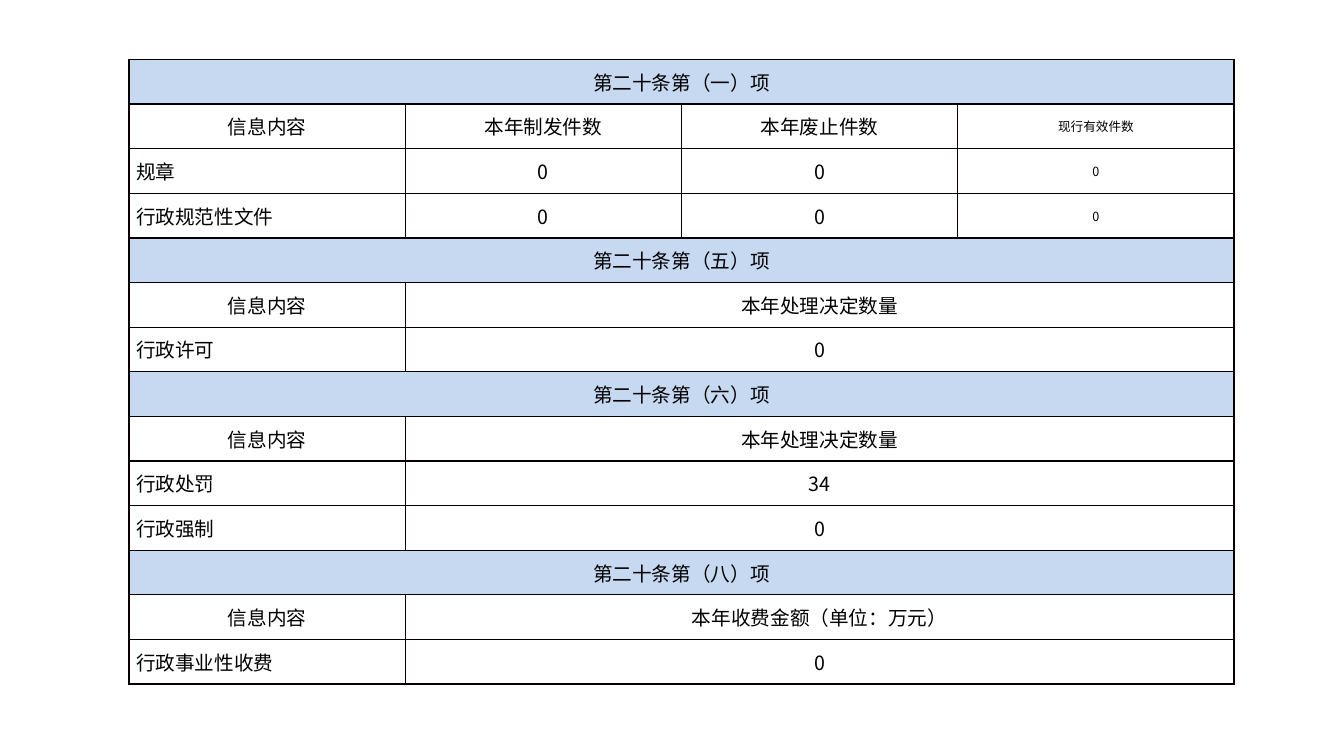
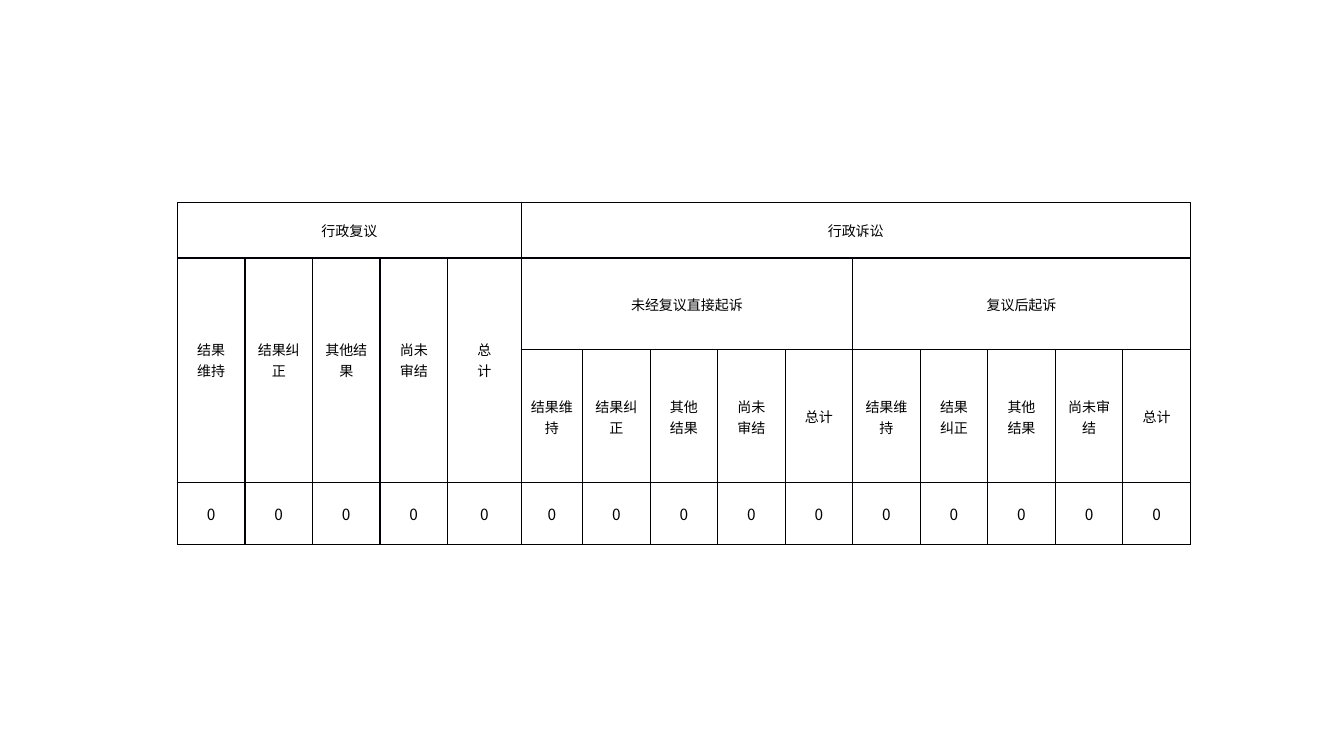
from dataclasses import dataclass
from typing import Optional

from lxml.etree import SubElement
from pptx import Presentation
from pptx.dml.color import RGBColor
from pptx.enum.text import MSO_ANCHOR, PP_ALIGN
from pptx.oxml.ns import qn
from pptx.util import Inches, Pt

FONT = "Noto Sans CJK SC"
INK = "000000"
BAND = "C6D9F1"
SIDE_INSET = 0.07


@dataclass
class Entry:
    """A text in a table, with its place and span in rows and columns."""
    text: str
    row: int
    col: int
    rows: int = 1
    cols: int = 1
    size: float = 14
    align: PP_ALIGN = PP_ALIGN.CENTER
    leading: Optional[float] = None
    fill: Optional[str] = None
    bottom: float = 0


@dataclass
class Section:
    """A banded heading, its column heads and its records."""
    title: str
    heads: list[str]
    records: list[list[str]]


def rgb(code: str) -> RGBColor:
    return RGBColor.from_string(code)


def put_text(tf, text: str, *, size: float, align: PP_ALIGN,
             leading: Optional[float] = None, color: str = INK) -> None:
    for i, line in enumerate(text.split("\n")):
        p = tf.add_paragraph() if i else tf.paragraphs[0]
        p.alignment = align
        if leading:
            p.line_spacing = Pt(leading)
        r = p.add_run()
        r.text = line
        r.font.size = Pt(size)
        r.font.name = FONT
        r.font.color.rgb = rgb(color)
        SubElement(r.font._element, qn("a:ea"), typeface=FONT)


def style_cell(cell, border: str) -> None:
    cell.margin_left = cell.margin_right = Inches(SIDE_INSET)
    cell.margin_top = cell.margin_bottom = 0
    cell.vertical_anchor = MSO_ANCHOR.MIDDLE
    tc_pr = cell._tc.get_or_add_tcPr()
    for side in ("lnL", "lnR", "lnT", "lnB"):
        ln = SubElement(tc_pr, qn(f"a:{side}"), w=str(Pt(1)))
        SubElement(SubElement(ln, qn("a:solidFill")), qn("a:srgbClr"), val=border)
    cell.fill.background()


def draw_table(slide, left: float, top: float, widths: list[float],
               heights: list[float], entries: list[Entry], border: str) -> None:
    sp = slide.shapes.add_table(len(heights), len(widths), Inches(left), Inches(top),
                                Inches(sum(widths)), Inches(sum(heights)))
    table = sp.table
    table.first_row = table.horz_banding = False
    for column, width in zip(table.columns, widths):
        column.width = Inches(width)
    for row, height in zip(table.rows, heights):
        row.height = Inches(height)
    for cell in table.iter_cells():
        style_cell(cell, border)
    for e in entries:
        cell = table.cell(e.row, e.col)
        if e.rows * e.cols > 1:
            cell.merge(table.cell(e.row + e.rows - 1, e.col + e.cols - 1))
        if e.fill:
            cell.fill.solid()
            cell.fill.fore_color.rgb = rgb(e.fill)
        cell.margin_bottom = Inches(e.bottom)
        put_text(cell.text_frame, e.text, size=e.size, align=e.align, leading=e.leading)


# Disclosure table: sections stacked on four equal columns
DECISIONS = ["信息内容", "本年处理决定数量"]
SECTIONS = [
    Section("第二十条第（一）项",
            ["信息内容", "本年制发件数", "本年废止件数", "现行有效件数"],
            [["规章", "0", "0", "0"], ["行政规范性文件", "0", "0", "0"]]),
    Section("第二十条第（五）项", DECISIONS, [["行政许可", "0"]]),
    Section("第二十条第（六）项", DECISIONS, [["行政处罚", "34"], ["行政强制", "0"]]),
    Section("第二十条第（八）项", ["信息内容", "本年收费金额（单位：万元）"],
            [["行政事业性收费", "0"]]),
]


def disclosure_slide(slide) -> None:
    columns = 4
    entries: list[Entry] = []
    row = 0
    for section in SECTIONS:
        entries.append(Entry(section.title, row, 0, cols=columns, fill=BAND))
        for i, texts in enumerate([section.heads, *section.records]):
            row += 1
            for col, text in enumerate(texts):
                span = columns - col if col == len(texts) - 1 else 1
                is_label = i > 0 and col == 0
                entries.append(Entry(
                    text, row, col, cols=span,
                    size=9 if col == columns - 1 else 14,
                    align=PP_ALIGN.LEFT if is_label else PP_ALIGN.CENTER))
        row += 1
    draw_table(slide, 1.28, 0.59, [2.74] * columns, [6.2 / row] * row, entries, "080000")


# Review and litigation table: three groups of five outcomes
REVIEW = ["结果\n维持", "结果纠正", "其他结果", "尚未\n审结", "总\n计"]
DIRECT = ["结果维持", "结果纠正", "其他\n结果", "尚未\n审结", "总计"]
AFTER_REVIEW = ["结果维持", "结果\n纠正", "其他\n结果", "尚未审结", "总计"]


def litigation_slide(slide) -> None:
    group = len(REVIEW)
    widths = [0.67] * (3 * group)
    widths[group - 1:group + 1] = [0.73, 0.61]
    head = dict(size=10, leading=15)
    entries = [
        Entry("行政复议", 0, 0, cols=group, **head),
        Entry("行政诉讼", 0, group, cols=2 * group, **head),
        Entry("未经复议直接起诉", 1, group, cols=group, **head),
        Entry("复议后起诉", 1, 2 * group, cols=group, **head),
    ]
    entries += [Entry(text, 1, col, rows=2, bottom=0.21, **head)
                for col, text in enumerate(REVIEW)]
    entries += [Entry(text, 2, col, **head)
                for col, text in enumerate(DIRECT + AFTER_REVIEW, group)]
    entries += [Entry("0", 3, col, size=11) for col in range(len(widths))]
    draw_table(slide, 1.76, 2.01, widths, [0.55, 0.91, 1.32, 0.61], entries, "000008")


def main() -> None:
    prs = Presentation()
    prs.slide_width, prs.slide_height = Inches(13.33), Inches(7.5)
    for build in (disclosure_slide, litigation_slide):
        build(prs.slides.add_slide(prs.slide_layouts[6]))
    prs.save("out.pptx")


if __name__ == "__main__":
    main()
